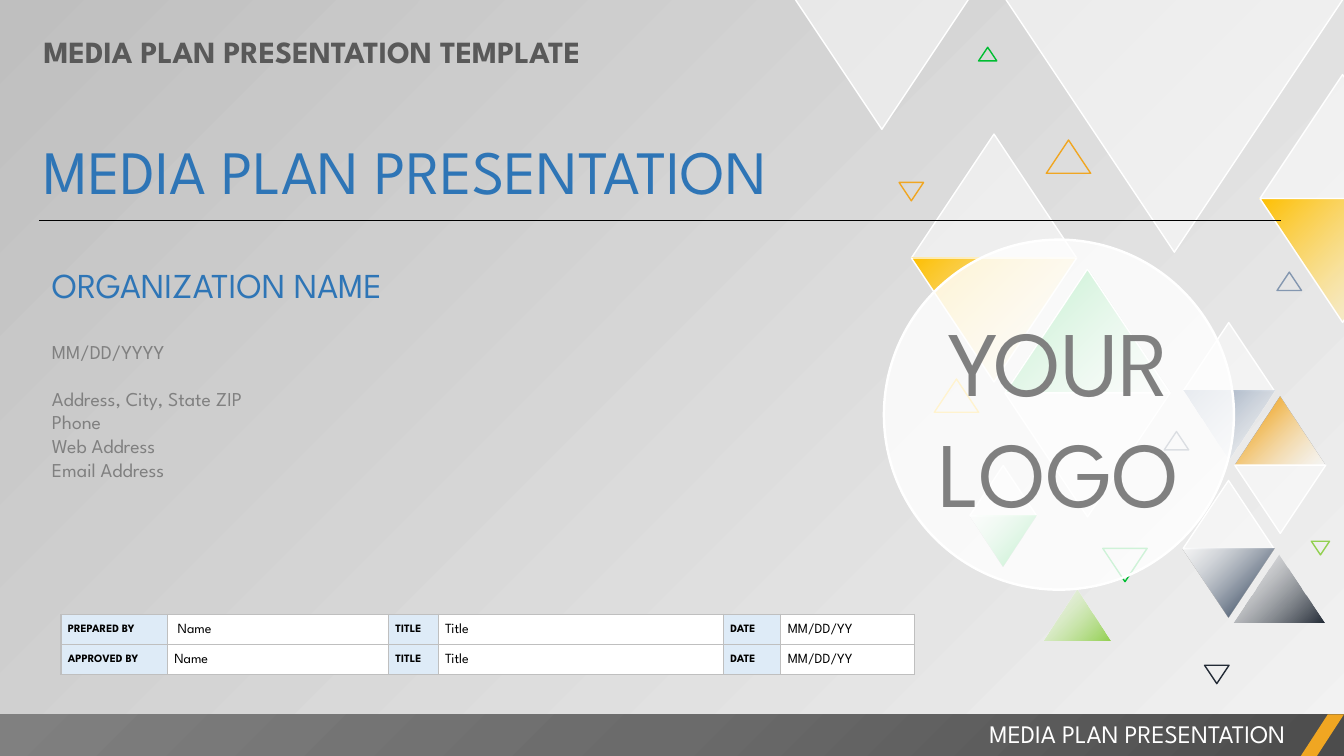
"""Builds the cover slide of a media plan presentation."""
from dataclasses import dataclass

from pptx import Presentation, oxml, util as u
from pptx.dml import color
from pptx.enum import shapes, text
from pptx.oxml import ns


@dataclass(frozen=True)
class Theme:
    """Colours, type sizes and font of the slide."""
    font: str = "League Spartan"
    white: str = "FFFFFF"
    black: str = "000000"
    heading: str = "595959"
    blue: str = "2E75B6"
    grey: str = "808080"
    pale_blue: str = "DEEBF7"
    border: str = "BFBFBF"
    amber: str = "F0A622"
    gold: str = "FFC000"
    green: str = "00BD32"
    lime: str = "92D050"
    steel: str = "8497B0"
    slate: str = "44546A"
    ink: str = "222A35"
    backdrop: tuple = ((0, "F2F2F2", 40), (100, "BFBFBF", 100))
    footer: tuple = ((0, "4C4C4C", 100), (50, "6B6B6B", 100), (100, "808080", 100))
    veil: tuple = ((0, "FFFFFF", 50),)
    disc: tuple = ((0, "FFFFFF", 81),)
    title_size: int = 44
    logo_size: int = 66
    name_size: int = 25
    header_size: int = 22
    footer_size: int = 18
    body_size: int = 14
    value_size: int = 10
    label_size: int = 8

    def fade_out(self, tint):
        """Return stops from a colour to sheer white."""
        return (0, tint, 100), (100, self.white, 50)

    def fade_in(self, tint):
        """Return stops from sheer white to a colour."""
        return (0, self.white, 50), (82, tint, 100)


class Cover:
    """Holds the theme and the current slide and draws elements on it."""

    def __init__(self, page, theme):
        """Keep the page and the theme."""
        self.page, self.theme = page, theme
        self.decor = page.shapes.add_group_shape()

    def paint(self, stops, radial=False):
        """Return a solid or gradient fill element."""
        inks = [f'<a:srgbClr val="{tint}"><a:alpha val="{alpha * 1000}"/></a:srgbClr>'
                for _, tint, alpha in stops]
        space = ns.nsdecls("a")
        if len(stops) == 1:
            return oxml.parse_xml(f'<a:solidFill {space}>{inks[0]}</a:solidFill>')
        marks = "".join(f'<a:gs pos="{stop[0] * 1000}">{ink}</a:gs>'
                        for stop, ink in zip(stops, inks))
        shade = ('<a:path path="circle"><a:fillToRect l="100000" t="100000"/></a:path>'
                 if radial else '<a:lin ang="13500000" scaled="0"/>')
        return oxml.parse_xml(f'<a:gradFill {space} rotWithShape="1">'
                              f'<a:gsLst>{marks}</a:gsLst>{shade}</a:gradFill>')

    def background(self, stops):
        """Fill the page background with a gradient."""
        self.page.background.fill.solid()
        holder = self.page._element.cSld.bg.bgPr
        holder.replace(holder[0], self.paint(stops))

    def shape(self, kind, box, stops=None, line=None, weight=1, radial=False, parent=None):
        """Add a preset shape."""
        item = (parent or self.page).shapes.add_shape(kind, *map(u.Pt, box))
        item.shadow.inherit = False
        if stops:
            item._element.spPr.prstGeom.addnext(self.paint(stops, radial))
        else:
            item.fill.background()
        if line:
            item.line.color.rgb = color.RGBColor.from_string(line)
            item.line.width = u.Pt(weight)
        else:
            item.line.fill.background()
        return item

    def triangle(self, left, top, width, stops=None, line=None, down=False):
        """Add a triangle three quarters as high as wide."""
        item = self.shape(shapes.MSO_SHAPE.ISOSCELES_TRIANGLE,
                          (left, top, width, width * 0.75), stops, line, parent=self.decor)
        item.rotation = 180 if down else 0

    def diamond(self, left, top, width, upper, lower):
        """Add an upright triangle above an inverted one."""
        for row, stops in enumerate((upper, lower)):
            edged = stops == self.theme.veil or width > 100
            self.triangle(left, top + row * width * 0.75, width, stops,
                          self.theme.white if edged else None, row == 1)

    def add_lines(self, frame, lines, align=text.PP_ALIGN.LEFT, spacing=None):
        """Add lines of (words, size, colour, bold, space before)."""
        for index, (words, size, tint, bold, before) in enumerate(lines):
            para = frame.add_paragraph() if index else frame.paragraphs[0]
            para.alignment, para.space_before = align, u.Pt(before)
            if spacing:
                para.line_spacing = spacing
            span = para.add_run()
            span.text = words
            span.font.name, span.font.size, span.font.bold = self.theme.font, u.Pt(size), bold
            span.font.color.rgb = color.RGBColor.from_string(tint)

    def title(self, box, line):
        """Move and format the title placeholder."""
        item = self.page.shapes.title
        item.left, item.top, item.width, item.height = map(u.Pt, box)
        frame = item.text_frame
        frame.vertical_anchor = text.MSO_ANCHOR.TOP
        frame.auto_size = text.MSO_AUTO_SIZE.NONE
        self.add_lines(frame, [line])

    def text_box(self, box, lines, align=text.PP_ALIGN.LEFT):
        """Add a wrapping text box."""
        frame = self.page.shapes.add_textbox(*map(u.Pt, box)).text_frame
        frame.word_wrap = True
        frame.auto_size = text.MSO_AUTO_SIZE.SHAPE_TO_FIT_TEXT
        self.add_lines(frame, lines, align)

    def rule(self, start, end, weight):
        """Add a straight line."""
        line = self.page.shapes.add_connector(shapes.MSO_CONNECTOR.STRAIGHT,
                                              *map(u.Pt, start + end))
        line.line.color.rgb = color.RGBColor.from_string(self.theme.black)
        line.line.width = u.Pt(weight)
        line._element.spPr.append(oxml.parse_xml(f'<a:effectLst {ns.nsdecls("a")}/>'))

    def logo(self, box, words):
        """Add the translucent logo disc."""
        item = self.shape(shapes.MSO_SHAPE.OVAL, box, self.theme.disc, self.theme.white, 1.75)
        frame = item.text_frame
        frame.margin_left = frame.margin_right = frame.margin_top = frame.margin_bottom = 0
        frame.word_wrap, frame.vertical_anchor = False, text.MSO_ANCHOR.MIDDLE
        self.add_lines(frame, [(word, self.theme.logo_size, self.theme.grey, False, 0)
                               for word in words], text.PP_ALIGN.CENTER)

    def cell(self, cell, words, label):
        """Fill, border and letter one table cell."""
        theme = self.theme
        for side in "LRTB":
            cell._tc.get_or_add_tcPr().append(oxml.parse_xml(
                f'<a:ln{side} {ns.nsdecls("a")} w="12700"><a:solidFill>'
                f'<a:srgbClr val="{theme.border}"/></a:solidFill></a:ln{side}>'))
        cell.fill.solid()
        cell.fill.fore_color.rgb = color.RGBColor.from_string(
            theme.pale_blue if label else theme.white)
        cell.margin_left = cell.margin_right = u.Pt(5)
        cell.margin_top = cell.margin_bottom = 0
        cell.vertical_anchor = text.MSO_ANCHOR.MIDDLE
        size = theme.label_size if label else theme.value_size
        self.add_lines(cell.text_frame, [(words, size, theme.black, label, 0)], spacing=1.07)

    def table(self, left, top, widths, height, rows):
        """Add a table that alternates labels and values."""
        table = self.page.shapes.add_table(
            len(rows), len(widths),
            *map(u.Pt, (left, top, sum(widths), height * len(rows)))).table
        table.first_row = table.horz_banding = False
        for column, width in zip(table.columns, widths):
            column.width = u.Pt(width)
        for row, entries in enumerate(rows):
            table.rows[row].height = u.Pt(height)
            for column, words in enumerate(entries):
                self.cell(table.cell(row, column), words, column % 2 == 0)


def main():
    """Build the slide and save it."""
    deck = Presentation()
    deck.slide_width, deck.slide_height = u.Pt(960), u.Pt(540)
    theme = Theme()
    cover = Cover(deck.slides.add_slide(deck.slide_layouts[5]), theme)
    cover.background(theme.backdrop)

    for diamond in (
            (651, 95.8, 118, theme.veil, theme.fade_out(theme.gold)),
            (717.8, 192.2, 118, theme.fade_in(theme.green), theme.veil),
            (845, 343.2, 65, theme.veil, theme.fade_in(theme.slate)),
            (845.2, 230.4, 65, theme.veil, theme.fade_out(theme.steel)),
            (882, 283.5, 65, theme.fade_in(theme.amber), theme.veil),
            (692.6, 332.6, 48, theme.veil, theme.fade_in(theme.green)),
            (900, 53.3, 118, theme.veil, theme.fade_out(theme.gold))):
        cover.diamond(*diamond)
    for left, width in ((717.8, 242), (567.4, 125)):
        cover.triangle(left, -1.4, width, theme.veil, theme.white, True)
    cover.triangle(881.3, 396, 65, theme.fade_out(theme.ink))
    cover.triangle(745.2, 421.2, 48, theme.fade_out(theme.lime))
    for left, top, width, tint, down in (
            (787.7, 391.7, 31.7, theme.green, True), (667.4, 270.7, 31.7, theme.gold, False),
            (747.4, 100, 31.7, theme.amber, False), (831.6, 308.2, 17.5, theme.slate, False),
            (860.4, 475.2, 17.5, theme.ink, True), (642.2, 130.3, 17.5, theme.amber, True),
            (912.2, 194.4, 17.5, theme.steel, False), (699, 33.8, 13, theme.green, False),
            (936.7, 386.6, 13, theme.lime, True)):
        cover.triangle(left, top, width, line=tint, down=down)

    cover.text_box((24, 20, 651.6, 34), [("MEDIA PLAN PRESENTATION TEMPLATE",
                                          theme.header_size, theme.heading, True, 0)])
    cover.shape(shapes.MSO_SHAPE.RECTANGLE, (0, 510.3, 960, 30), theme.footer, radial=True)
    slash = cover.shape(shapes.MSO_SHAPE.PARALLELOGRAM, (929, 510.3, 31, 30),
                        ((0, theme.amber, 100),))
    slash.adjustments[0] = 0.65
    cover.text_box((378, 509.8, 547.2, 29), [("MEDIA PLAN PRESENTATION", theme.footer_size,
                                              theme.white, False, 0)], text.PP_ALIGN.RIGHT)
    cover.title((24, 91.4, 903.6, 60.5), ("MEDIA PLAN PRESENTATION", theme.title_size,
                                          theme.blue, False, 0))
    details = (("MM/DD/YYYY", 24), ("Address, City, State ZIP", 17), ("Phone", 0),
               ("Web Address", 0), ("Email Address", 0))
    cover.text_box((30, 185, 653.8, 163.4),
                   [("ORGANIZATION NAME", theme.name_size, theme.blue, False, 0)]
                   + [(words, theme.body_size, theme.grey, False, before)
                      for words, before in details])
    cover.rule((28, 157.2), (915, 157.2), 0.5)
    cover.logo((631.4, 171.2, 250, 250), ("YOUR", "LOGO"))
    cover.table(43.5, 438.8, (76, 158, 35.5, 203.8, 41, 95.5), 21.4, (
        ("PREPARED BY", " Name", "TITLE", "Title", "DATE", "MM/DD/YY"),
        ("APPROVED BY", "Name", "TITLE", "Title", "DATE", "MM/DD/YY")))
    deck.save("out.pptx")


if __name__ == "__main__":
    main()
